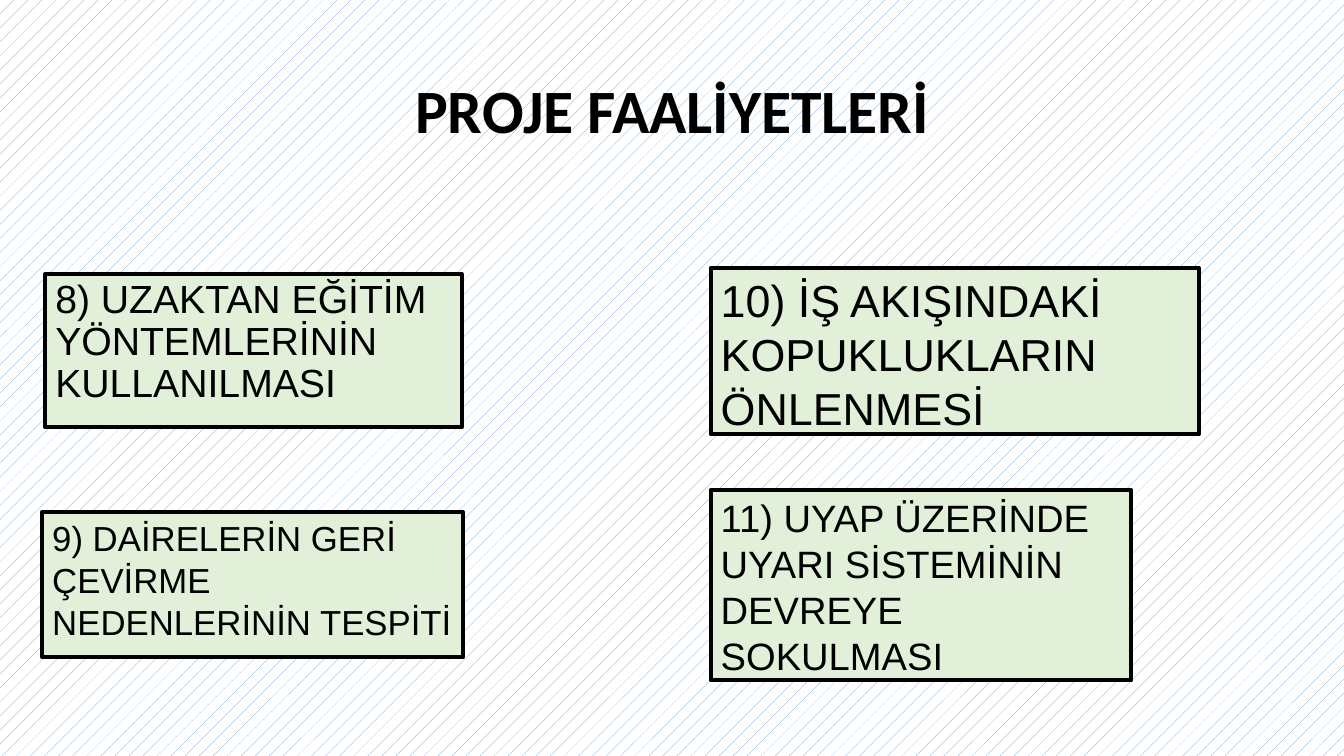
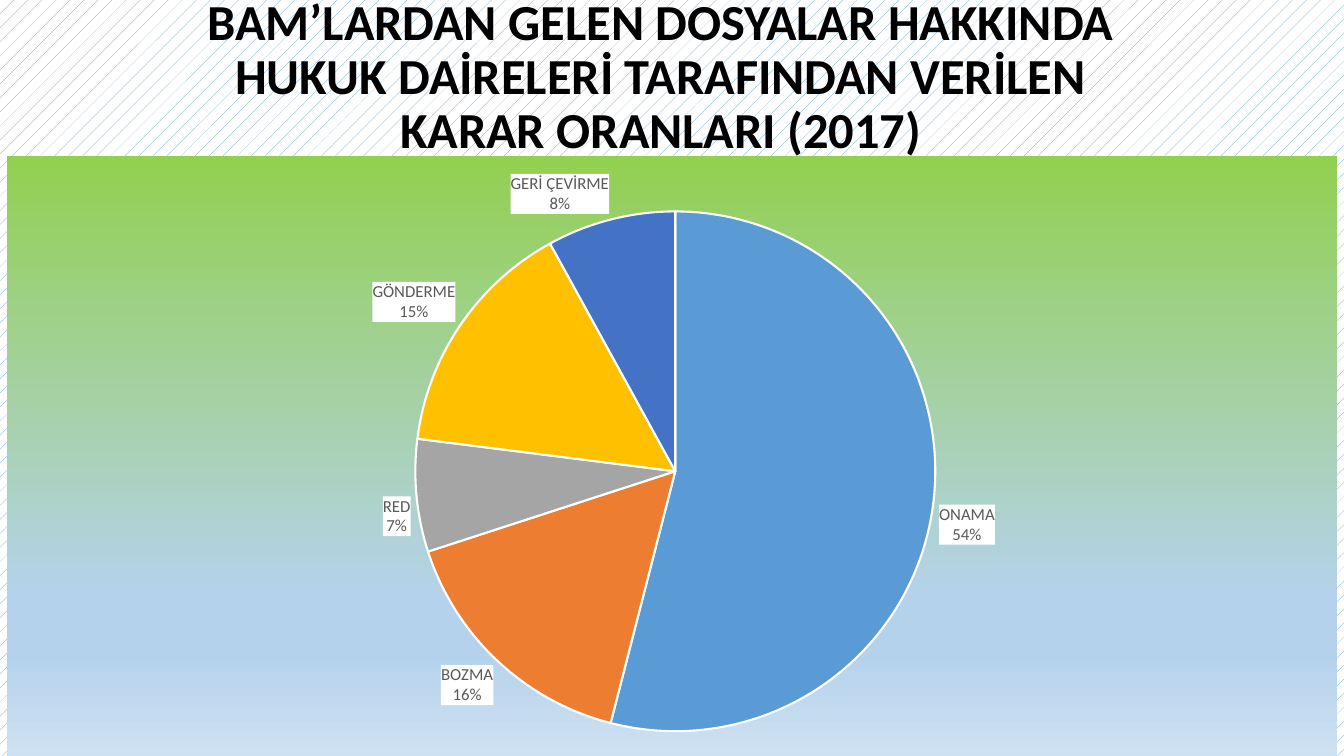
from lxml.etree import SubElement
from pptx import Presentation
from pptx.chart.data import CategoryChartData
from pptx.dml.color import RGBColor
from pptx.enum.chart import XL_CHART_TYPE, XL_LABEL_POSITION
from pptx.enum.dml import MSO_PATTERN
from pptx.enum.shapes import MSO_SHAPE
from pptx.enum.text import MSO_ANCHOR, PP_ALIGN
from pptx.oxml import parse_xml
from pptx.oxml.ns import nsdecls, qn
from pptx.util import Inches, Pt

# Shared style
BLACK = RGBColor(0x00, 0x00, 0x00)
WHITE = RGBColor(0xFF, 0xFF, 0xFF)
GRAY = RGBColor(0x59, 0x59, 0x59)
BLUE = RGBColor(0x5B, 0x9B, 0xD5)
PALE_GREEN = RGBColor(0xE2, 0xF0, 0xD9)
HEAD_FONT, BODY_FONT = "Calibri", "Arial"
WIDTH, HEIGHT = 13.33, 7.5

# Slide 1: activities as (text, size, line spacing, left, top, width, height)
ACTIVITIES_TITLE = "PROJE FAALİYETLERİ"
ACTIVITIES = [
    ("8) UZAKTAN EĞİTİM YÖNTEMLERİNİN KULLANILMASI", 28, 0.9, 0.45, 2.72, 4.13, 1.52),
    ("9) DAİRELERİN GERİ ÇEVİRME NEDENLERİNİN TESPİTİ", 24.8, 1.0, 0.42, 5.08, 4.17, 1.44),
    ("10) İŞ AKIŞINDAKİ KOPUKLUKLARIN ÖNLENMESİ", 32, 1.0, 7.05, 2.66, 4.84, 1.65),
    ("11) UYAP ÜZERİNDE UYARI SİSTEMİNİN DEVREYE SOKULMASI", 27.2, 1.0, 7.05, 4.86, 4.17, 1.89),
]

# Slide 2: decisions as (category, percent, colour)
DECISIONS_TITLE = ("BAM’LARDAN GELEN DOSYALAR HAKKINDA HUKUK DAİRELERİ "
                   "TARAFINDAN VERİLEN KARAR ORANLARI (2017)")
DECISIONS = [
    ("ONAMA", 54, BLUE),
    ("BOZMA", 16, RGBColor(0xED, 0x7D, 0x31)),
    ("RED", 7, RGBColor(0xA5, 0xA5, 0xA5)),
    ("GÖNDERME", 15, RGBColor(0xFF, 0xC0, 0x00)),
    ("GERİ ÇEVİRME", 8, RGBColor(0x44, 0x72, 0xC4)),
]
CHART_GRADIENT = [(0, "92D050"), (74, "B5D2EC"), (83, "B5D2EC"), (100, "CEE1F2")]
PIE_AREA = {"x": 0.307, "y": 0.092, "w": 0.391, "h": 0.867}


def add_run(p, text, size, font, bold=False):
    r = p.add_run()
    r.text = text
    r.font.size, r.font.name, r.font.bold = Pt(size), font, bold
    r.font.color.rgb = BLACK


def add_title(s, text, size, *box):
    tf = s.shapes.add_textbox(*map(Inches, box)).text_frame
    tf.word_wrap = True
    tf.vertical_anchor = MSO_ANCHOR.MIDDLE
    p = tf.paragraphs[0]
    p.alignment, p.line_spacing = PP_ALIGN.CENTER, 0.9
    add_run(p, text, size, HEAD_FONT, bold=True)


def add_activity(s, text, size, spacing, *box):
    sp = s.shapes.add_shape(MSO_SHAPE.RECTANGLE, *map(Inches, box))
    sp.shadow.inherit = False
    sp.fill.solid()
    sp.fill.fore_color.rgb = PALE_GREEN
    sp.line.color.rgb, sp.line.width = BLACK, Pt(3)
    tf = sp.text_frame
    tf.word_wrap = True
    tf.vertical_anchor = MSO_ANCHOR.TOP
    tf.margin_right = Inches(0.06)
    p = tf.paragraphs[0]
    p.alignment, p.line_spacing = PP_ALIGN.LEFT, spacing
    add_run(p, text, size, BODY_FONT)


def add_pie(s, *box):
    data = CategoryChartData()
    data.categories = [name for name, _, _ in DECISIONS]
    data.add_series("Series 1", [value for _, value, _ in DECISIONS])
    chart = s.shapes.add_chart(XL_CHART_TYPE.PIE, *map(Inches, box), data).chart
    chart.has_title = chart.has_legend = False
    chart.font.size, chart.font.name = Pt(10), HEAD_FONT
    chart.font.color.rgb = BLACK

    # Slices
    series = chart.plots[0].series[0]
    for i, (_, _, color) in enumerate(DECISIONS):
        fmt = series.points[i].format
        fmt.fill.solid()
        fmt.fill.fore_color.rgb = color
        fmt.line.color.rgb, fmt.line.width = WHITE, Pt(1.5)

    # Labels on white, name above percentage
    labels = series.data_labels
    labels.show_category_name = labels.show_percentage = True
    labels.show_value = False
    labels.number_format, labels.number_format_is_linked = "0%", False
    labels.position = XL_LABEL_POSITION.OUTSIDE_END
    labels.font.size, labels.font.name = Pt(12), HEAD_FONT
    labels.font.color.rgb = GRAY
    el = labels._element
    el.find(qn("c:txPr")).addprevious(parse_xml(
        f'<c:spPr {nsdecls("c", "a")}><a:solidFill><a:srgbClr val="{WHITE}"/>'
        '</a:solidFill></c:spPr>'))
    separator = parse_xml(f'<c:separator {nsdecls("c")}>\n</c:separator>')
    flags = [e for e in el if e.tag in (qn("c:showPercent"), qn("c:showBubbleSize"))]
    flags[-1].addnext(separator)

    # Gradient behind the whole chart
    stops = "".join(f'<a:gs pos="{pos * 1000}"><a:srgbClr val="{color}"/></a:gs>'
                    for pos, color in CHART_GRADIENT)
    chart._chartSpace.find(qn("c:chart")).addnext(parse_xml(
        f'<c:spPr {nsdecls("c", "a")}><a:gradFill><a:gsLst>{stops}</a:gsLst>'
        '<a:lin ang="5400000" scaled="0"/></a:gradFill><a:ln><a:noFill/></a:ln></c:spPr>'))

    # Place of the pie inside the chart
    plot_area = chart._chartSpace.find(".//" + qn("c:plotArea"))
    layout = plot_area.find(qn("c:layout"))
    if layout is None:
        layout = parse_xml(f'<c:layout {nsdecls("c")}/>')
        plot_area.insert(0, layout)
    manual = SubElement(layout, qn("c:manualLayout"))
    settings = {"layoutTarget": "inner", "xMode": "edge", "yMode": "edge", **PIE_AREA}
    for tag, value in settings.items():
        SubElement(manual, qn(f"c:{tag}")).set("val", str(value))


def main():
    prs = Presentation()
    prs.slide_width, prs.slide_height = Inches(WIDTH), Inches(HEIGHT)

    # Patterned background for every slide
    fill = prs.slide_master.background.fill
    fill.patterned()
    fill.pattern = MSO_PATTERN.PERCENT_5
    fill.fore_color.rgb, fill.back_color.rgb = BLUE, WHITE
    blank = prs.slide_layouts[6]

    s = prs.slides.add_slide(blank)
    add_title(s, ACTIVITIES_TITLE, 44, 0.92, 0.4, 11.5, 1.45)
    for activity in ACTIVITIES:
        add_activity(s, *activity)

    s = prs.slides.add_slide(blank)
    add_title(s, DECISIONS_TITLE, 36, 1.67, 0, 9.77, 1.55)
    add_pie(s, 0.07, 1.55, WIDTH - 2 * 0.07, HEIGHT - 1.55)

    prs.save("out.pptx")


if __name__ == "__main__":
    main()
